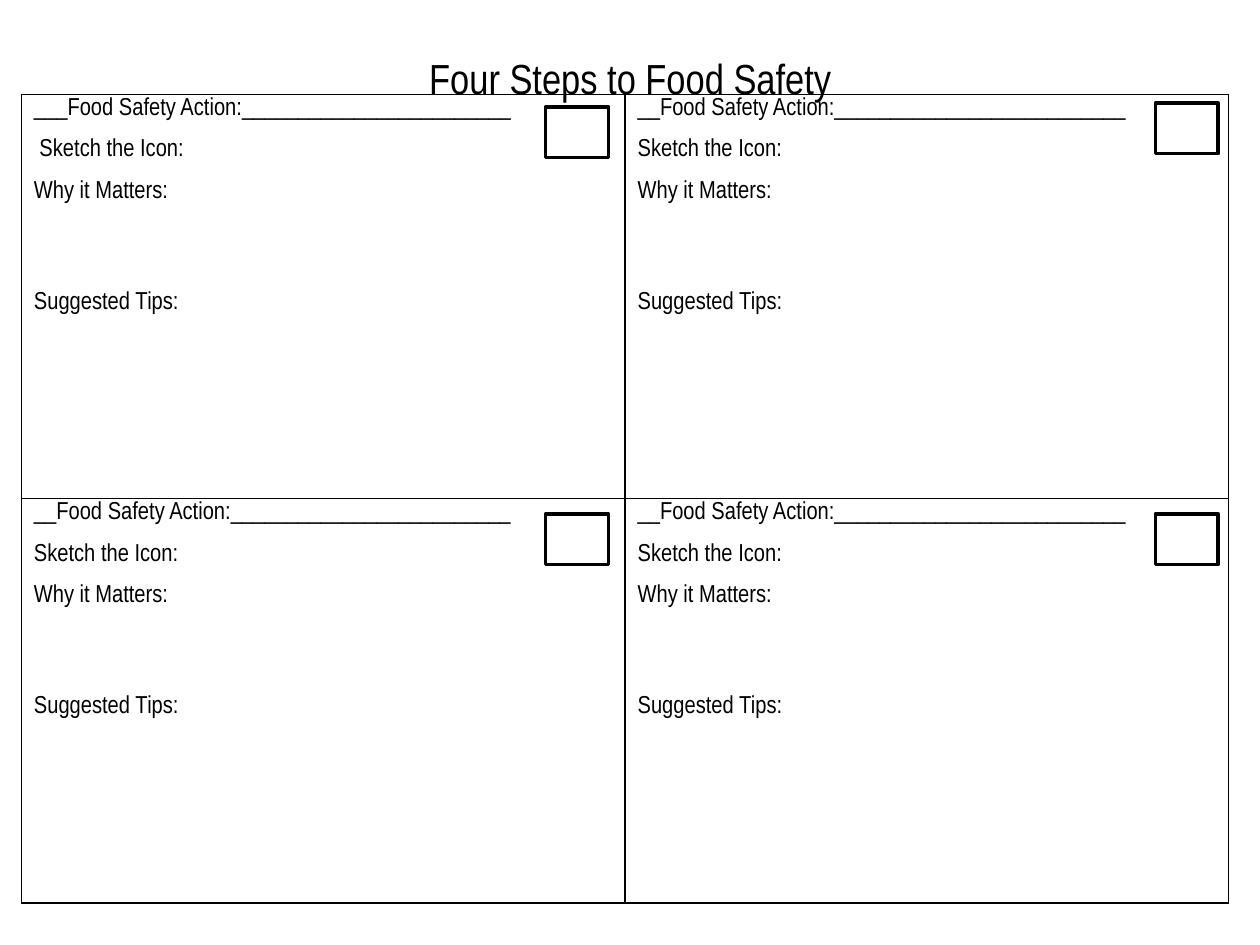
from lxml.etree import SubElement
from pptx import Presentation
from pptx.dml.color import RGBColor
from pptx.enum.shapes import MSO_SHAPE
from pptx.enum.text import MSO_ANCHOR, MSO_AUTO_SIZE, PP_ALIGN
from pptx.oxml.ns import qn
from pptx.util import Cm, Pt

COLORS = {"ink": "000000", "paper": "FFFFFF"}
INK = RGBColor.from_string(COLORS["ink"])
PAPER = RGBColor.from_string(COLORS["paper"])
FONT = "Arial Narrow"
LINE_PITCH = 13.2  # points per writing line at 80% spacing


def add_text(para, text, size):
    span = para.add_run()
    span.text = text
    for name, value in {"name": FONT, "size": Pt(size), "bold": False}.items():
        setattr(span.font, name, value)
    span.font.color.rgb = INK


def add_borders(cell):
    properties = cell._tc.get_or_add_tcPr()
    for side in ("lnL", "lnR", "lnT", "lnB"):
        line = SubElement(properties, qn(f"a:{side}"), w=str(Pt(1)))
        fill = SubElement(line, qn("a:solidFill"))
        SubElement(fill, qn("a:srgbClr"), val=COLORS["ink"])


deck = Presentation()
deck.slide_width, deck.slide_height = Cm(25.4), Cm(19.05)
page = deck.slides.add_slide(deck.slide_layouts[5])

# Title
title = page.shapes.title
title_place = {"left": 0.64, "top": 0.84, "width": 24.13, "height": 1.02}
for name, value in title_place.items():
    setattr(title, name, Cm(value))
title_format = {
    "margin_top": Cm(0.21),
    "vertical_anchor": MSO_ANCHOR.TOP,
    "auto_size": MSO_AUTO_SIZE.NONE,
    "word_wrap": True,
}
for name, value in title_format.items():
    setattr(title.text_frame, name, value)
title_para = title.text_frame.paragraphs[0]
title_para.alignment = PP_ALIGN.CENTER
add_text(title_para, "Four Steps to Food Safety", 24)

# Worksheet grid: underscores before and after the action, then the icon prompt
steps = [
    [(3, 24, " Sketch the Icon:"), (2, 26, "Sketch the Icon:")],
    [(2, 25, "Sketch the Icon:"), (2, 26, "Sketch the Icon:")],
]
grid = page.shapes.add_table(2, 2, Cm(0.43), Cm(1.9), Cm(24.34), Cm(16.3)).table
grid.first_row = False
grid.horz_banding = False

for row, row_steps in enumerate(steps):
    for column, (before, after, icon_prompt) in enumerate(row_steps):
        cell = grid.cell(row, column)
        add_borders(cell)
        cell.fill.background()
        # Each prompt with the number of writing lines left above it
        prompts = [
            ("_" * before + "Food Safety Action:" + "_" * after, 0),
            (icon_prompt, 1),
            ("Why it Matters:", 1),
            ("Suggested Tips:", 4),
        ]
        for index, (prompt, gap) in enumerate(prompts):
            frame = cell.text_frame
            para = frame.add_paragraph() if index else frame.paragraphs[0]
            para.line_spacing = 0.8
            para.space_before = Pt(gap * LINE_PITCH)
            add_text(para, prompt, 14)

# Number boxes
for left, top in [(11, 2.16), (23.29, 2.08), (11, 10.36), (23.29, 10.36)]:
    box = page.shapes.add_shape(
        MSO_SHAPE.RECTANGLE, Cm(left), Cm(top), Cm(1.27), Cm(1.02)
    )
    box.shadow.inherit = False
    box.fill.solid()
    box.fill.fore_color.rgb = PAPER
    box.line.color.rgb = INK
    box.line.width = Pt(2)

deck.save("out.pptx")
